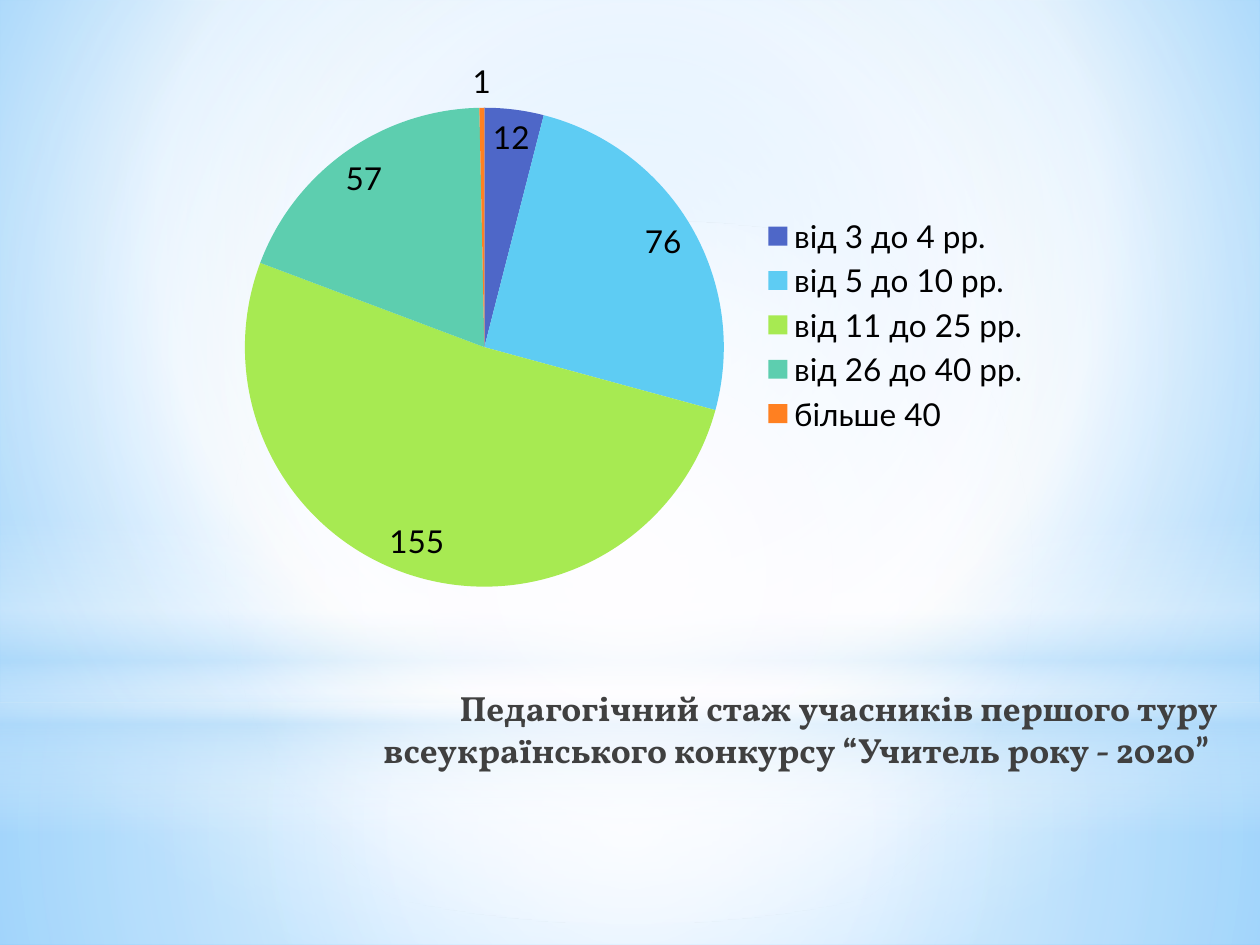
from dataclasses import dataclass
from lxml.etree import SubElement
from pptx import Presentation
from pptx.chart.data import CategoryChartData
from pptx.dml.color import RGBColor
from pptx.enum.chart import XL_CHART_TYPE, XL_LABEL_POSITION, XL_LEGEND_POSITION
from pptx.enum.shapes import MSO_SHAPE
from pptx.enum.text import MSO_ANCHOR, PP_ALIGN
from pptx.oxml.ns import qn
from pptx.util import Cm, Pt


@dataclass(frozen=True)
class Theme:
    sky: str = "9ED5FF"
    deep: str = "5BB9FF"
    white: str = "FFFFFF"
    mist: str = "FFFEFF"
    pale: str = "B4DCFA"
    title: str = "404040"
    label: str = "000000"
    title_font: str = "Vollkorn"
    chart_font: str = "Lato"
    title_size: int = 20
    chart_size: int = 18


THEME = Theme()
WIDTH, HEIGHT = 25.4, 19.05
HORIZON = 14.17
CENTRE = (50, 50, 50, 50)

TITLE = [
    ("Педагогічний стаж учасників першого туру всеукраїнського конкурсу “Учитель року - 2020", THEME.title_font),
    ("” ", THEME.chart_font),
]
EXPERIENCE = [
    ("від 3 до 4 рр.", 12, "4E67C8"),
    ("від 5 до 10 рр.", 76, "5ECCF3"),
    ("від 11 до 25 рр.", 155, "A7EA52"),
    ("від 26 до 40 рр.", 57, "5DCEAF"),
    ("більше 40", 1, "FF8021"),
]
SKY = [(0, THEME.sky, 100), (60, THEME.white, 100), (100, THEME.deep, 100)]
LAYERS = [
    (MSO_SHAPE.RECTANGLE, (0, HORIZON, WIDTH, HEIGHT - HORIZON), CENTRE,
     [(0, THEME.mist, 91), (37, THEME.mist, 76), (100, THEME.pale, 79)]),
    (MSO_SHAPE.RECTANGLE, (0, 0, WIDTH, HORIZON), CENTRE,
     [(0, THEME.mist, 89), (48, THEME.mist, 62), (100, THEME.pale, 79)]),
    (MSO_SHAPE.RECTANGLE, (0, 10.46, WIDTH, 6.35), None,
     [(0, THEME.mist, 0), (29, THEME.mist, 30), (45, THEME.pale, 40),
      (55, THEME.mist, 26), (65, THEME.pale, 60), (100, THEME.mist, 0)]),
    (MSO_SHAPE.OVAL, (0, 4.45, WIDTH, HORIZON), CENTRE,
     [(0, THEME.mist, 100), (56, THEME.mist, 0)]),
]
TITLE_BOX = (6.7, 13.72, 18.09, 3.18)
CHART_BOX = (4.09, 0.91, 16.94, 11.28)
PIE_AREA = {"x": 0.05, "y": 0.11, "w": 0.57, "h": 0.86}


def set_gradient(owner, fill, stops, focus):
    """Fill with colour stops, radial around focus or vertical without one."""
    fill.gradient()
    gradient = next(owner.iter(qn("a:gradFill")))
    for child in list(gradient):
        gradient.remove(child)
    stop_list = SubElement(gradient, qn("a:gsLst"))
    for position, colour, opacity in stops:
        stop = SubElement(stop_list, qn("a:gs"), pos=str(position * 1000))
        tint = SubElement(stop, qn("a:srgbClr"), val=colour)
        if opacity < 100:
            SubElement(tint, qn("a:alpha"), val=str(opacity * 1000))
    if focus:
        radial = SubElement(gradient, qn("a:path"), path="circle")
        edges = {side: str(share * 1000) for side, share in zip("ltrb", focus)}
        SubElement(radial, qn("a:fillToRect"), **edges)
    else:
        SubElement(gradient, qn("a:lin"), ang="5400000", scaled="0")


def add_layer(slide, kind, box, focus, stops):
    """Add one borderless backdrop layer."""
    layer = slide.shapes.add_shape(kind, *map(Cm, box))
    layer.shadow.inherit = False
    layer.line.fill.background()
    set_gradient(layer._element, layer.fill, stops, focus)


def style_font(font, name, size, colour, bold=False):
    """Apply typeface, size, colour and weight."""
    font.name = name
    font.size = Pt(size)
    font.bold = bold
    font.color.rgb = RGBColor.from_string(colour)


def add_text(slide, runs, *, box, size, colour, bold, align):
    """Add a wrapped paragraph made of text and typeface pairs."""
    frame = slide.shapes.add_textbox(*map(Cm, box)).text_frame
    frame.word_wrap = True
    frame.vertical_anchor = MSO_ANCHOR.TOP
    paragraph = frame.paragraphs[0]
    paragraph.alignment = align
    for words, typeface in runs:
        run = paragraph.add_run()
        run.text = words
        style_font(run.font, typeface, size, colour, bold)


def add_experience_pie(slide):
    """Add the pie of teaching experience with values and legend."""
    names, counts, colours = zip(*EXPERIENCE)
    figures = CategoryChartData()
    figures.categories = names
    figures.add_series("Series 1", counts)
    pie = slide.shapes.add_chart(XL_CHART_TYPE.PIE, *map(Cm, CHART_BOX), figures).chart
    style_font(pie.font, THEME.chart_font, THEME.chart_size, THEME.label)
    pie.has_title = False
    pie.has_legend = True
    pie.legend.position = XL_LEGEND_POSITION.RIGHT
    pie.legend.include_in_layout = False
    plot = pie.plots[0]
    plot.vary_by_categories = True
    plot.has_data_labels = True
    plot.data_labels.show_value = True
    plot.data_labels.show_percentage = False
    plot.data_labels.position = XL_LABEL_POSITION.BEST_FIT
    for index, colour in enumerate(colours):
        slice_fill = plot.series[0].points[index].format.fill
        slice_fill.solid()
        slice_fill.fore_color.rgb = RGBColor.from_string(colour)
    plot_area = next(pie._chartSpace.iter(qn("c:plotArea")))
    for old in plot_area.findall(qn("c:layout")):
        plot_area.remove(old)
    layout = SubElement(plot_area, qn("c:layout"))
    plot_area.insert(0, layout)
    manual = SubElement(layout, qn("c:manualLayout"))
    SubElement(manual, qn("c:layoutTarget"), val="inner")
    for axis in "xy":
        SubElement(manual, qn(f"c:{axis}Mode"), val="edge")
    for side, share in PIE_AREA.items():
        SubElement(manual, qn(f"c:{side}"), val=str(share))


def main():
    """Build and save the slide."""
    deck = Presentation()
    deck.slide_width, deck.slide_height = Cm(WIDTH), Cm(HEIGHT)
    slide = deck.slides.add_slide(deck.slide_layouts[6])
    set_gradient(slide._element, slide.background.fill, SKY, (20, 10, 20, 60))
    for layer in LAYERS:
        add_layer(slide, *layer)
    add_text(slide, TITLE, box=TITLE_BOX, size=THEME.title_size,
             colour=THEME.title, bold=True, align=PP_ALIGN.RIGHT)
    add_experience_pie(slide)
    deck.save("out.pptx")


if __name__ == "__main__":
    main()
